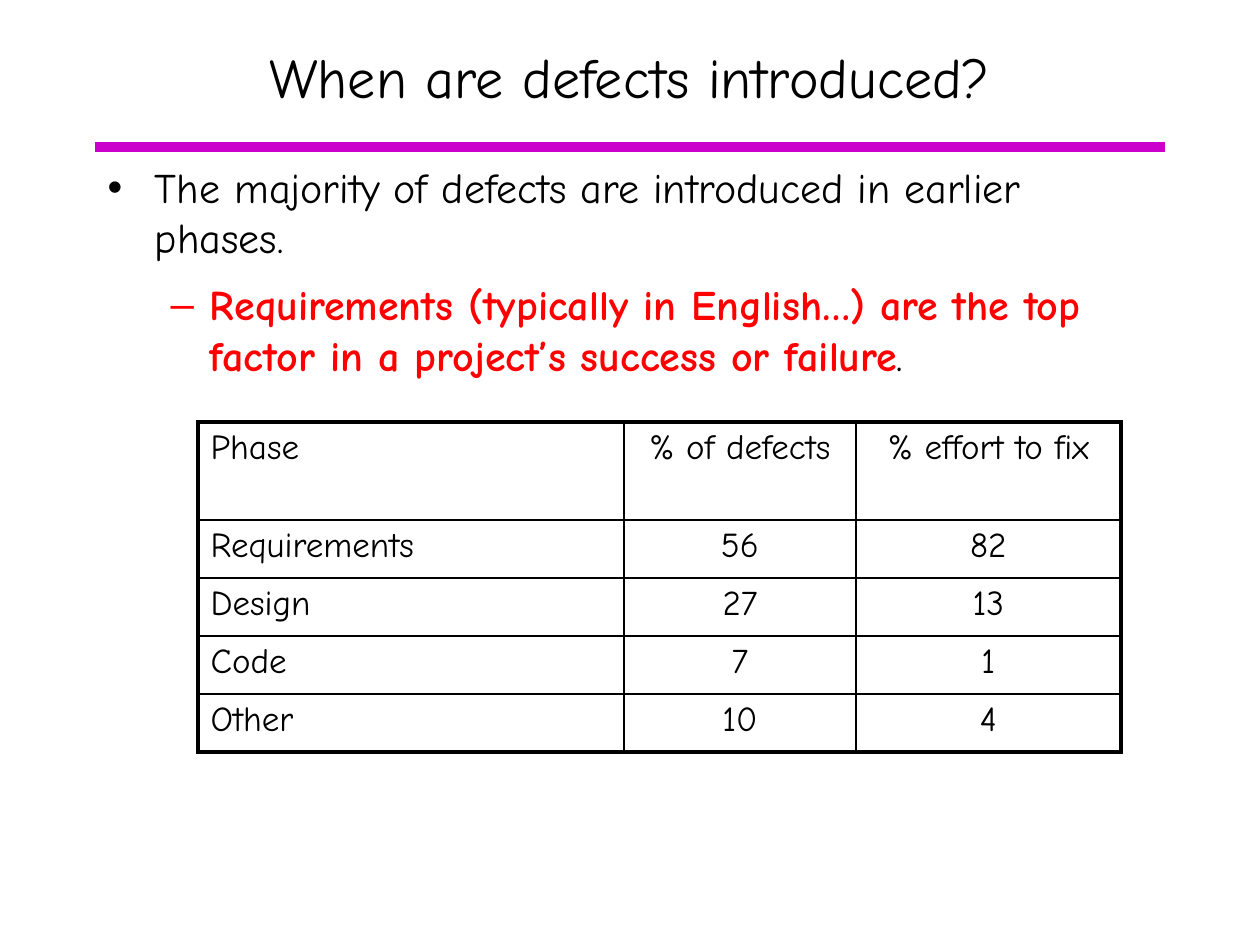
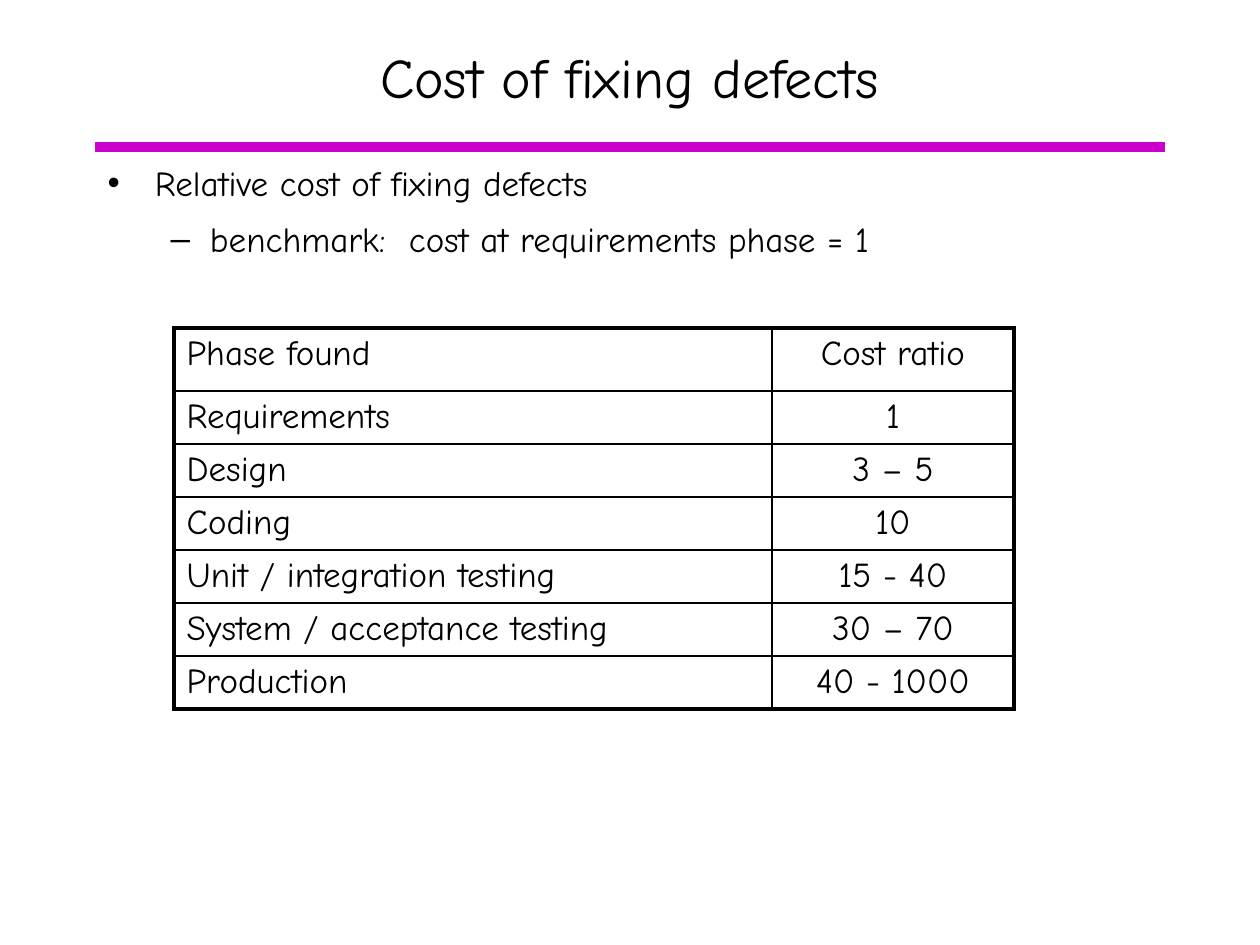
import dataclasses

import lxml.etree
import pptx
import pptx.dml.color
import pptx.enum.shapes
import pptx.enum.text
import pptx.oxml.ns
import pptx.util

EMU_PER_PX = 914400 / 126


@dataclasses.dataclass(frozen=True)
class Theme:
    font: str = "Comic Neue"
    ink: str = "000000"
    accent: str = "CC00CC"
    warning: str = "FF0000"
    title_size: int = 32
    large_size: int = 24
    text_size: int = 20
    sub_point_gap: float = 0.4
    band_width: float = 6
    outer_border: float = 2.25
    inner_border: float = 1


@dataclasses.dataclass(frozen=True)
class Box:
    left: int
    top: int
    width: int
    height: int


THEME = Theme()
TITLE_BOX = Box(95, 16, 1070, 120)
BAND_BOX = Box(95, 147, 1070, 0)
POINTS_BOX = Box(95, 155, 1070, 331)


def px(length):
    return pptx.util.Emu(round(length * EMU_PER_PX))


def frame(box):
    return px(box.left), px(box.top), px(box.width), px(box.height)


def add_run(paragraph, text, size, color=THEME.ink, bold=False):
    run = paragraph.add_run()
    run.text = text
    run.font.name = THEME.font
    run.font.size = pptx.util.Pt(size)
    run.font.bold = bold
    run.font.color.rgb = pptx.dml.color.RGBColor.from_string(color)


def place(placeholder, box):
    placeholder.left, placeholder.top, placeholder.width, placeholder.height = frame(box)
    placeholder.text_frame.auto_size = pptx.enum.text.MSO_AUTO_SIZE.NONE
    placeholder.text_frame.word_wrap = True
    return placeholder.text_frame


def add_heading(slide, box, heading):
    text_frame = place(slide.shapes.title, box)
    text_frame.vertical_anchor = pptx.enum.text.MSO_ANCHOR.MIDDLE
    paragraph = text_frame.paragraphs[0]
    paragraph.alignment = pptx.enum.text.PP_ALIGN.CENTER
    add_run(paragraph, heading, THEME.title_size)


def add_band(slide, box):
    band = slide.shapes.add_connector(
        pptx.enum.shapes.MSO_CONNECTOR.STRAIGHT,
        px(box.left), px(box.top), px(box.left + box.width), px(box.top + box.height),
    )
    band.line.color.rgb = pptx.dml.color.RGBColor.from_string(THEME.accent)
    band.line.width = pptx.util.Pt(THEME.band_width)
    lxml.etree.SubElement(band._element.spPr, pptx.oxml.ns.qn("a:effectLst"))


def add_points(slide, box, size, point, sub_point_runs):
    text_frame = place(slide.placeholders[1], box)
    main_point = text_frame.paragraphs[0]
    main_point.space_before = pptx.util.Pt(0)
    add_run(main_point, point, size)
    sub_point = text_frame.add_paragraph()
    sub_point.level = 1
    sub_point.space_before = pptx.util.Pt(size * THEME.sub_point_gap)
    for text, color, bold in sub_point_runs:
        add_run(sub_point, text, size, color, bold)


def set_borders(cell, outer_sides):
    properties = cell._tc.get_or_add_tcPr()
    for position, side in enumerate("LRTB"):
        points = THEME.outer_border if side in outer_sides else THEME.inner_border
        border = lxml.etree.Element(
            pptx.oxml.ns.qn(f"a:ln{side}"), w=str(pptx.util.Pt(points))
        )
        fill = lxml.etree.SubElement(border, pptx.oxml.ns.qn("a:solidFill"))
        lxml.etree.SubElement(fill, pptx.oxml.ns.qn("a:srgbClr"), val=THEME.ink)
        properties.insert(position, border)


def add_phase_table(slide, left, top, column_widths, row_heights, records):
    box = Box(left, top, sum(column_widths), sum(row_heights))
    table = slide.shapes.add_table(
        len(row_heights), len(column_widths), *frame(box)
    ).table
    table.first_row = False
    table.horz_banding = False
    for column, width in zip(table.columns, column_widths):
        column.width = px(width)
    for row, height in zip(table.rows, row_heights):
        row.height = px(height)
    last_row, last_column = len(row_heights) - 1, len(column_widths) - 1
    for row_index, record in enumerate(records):
        for column_index, value in enumerate(record):
            cell = table.cell(row_index, column_index)
            cell.fill.background()
            edges = {
                "L": column_index == 0,
                "R": column_index == last_column,
                "T": row_index == 0,
                "B": row_index == last_row,
            }
            set_borders(cell, [side for side, is_outer in edges.items() if is_outer])
            paragraph = cell.text_frame.paragraphs[0]
            if column_index:
                paragraph.alignment = pptx.enum.text.PP_ALIGN.CENTER
            add_run(paragraph, value, THEME.text_size)


def add_topic_slide(deck, heading, size, point, sub_point_runs):
    slide = deck.slides.add_slide(deck.slide_layouts[1])
    add_band(slide, BAND_BOX)
    add_heading(slide, TITLE_BOX, heading)
    add_points(slide, POINTS_BOX, size, point, sub_point_runs)
    return slide


def build_defect_origins(deck):
    slide = add_topic_slide(
        deck,
        "When are defects introduced?",
        THEME.large_size,
        "The majority of defects are introduced in earlier phases.",
        [
            (
                "Requirements (typically in English…) are the top factor "
                "in a project’s success or failure",
                THEME.warning,
                True,
            ),
            (".", THEME.ink, False),
        ],
    )
    defect_shares = [
        ("Phase", "% of defects", "% effort to fix"),
        ("Requirements", "56", "82"),
        ("Design", "27", "13"),
        ("Code", "7", "1"),
        ("Other", "10", "4"),
    ]
    add_phase_table(slide, 198, 422, [426, 232, 265], [98] + [58] * 4, defect_shares)


def build_fixing_costs(deck):
    slide = add_topic_slide(
        deck,
        "Cost of fixing defects",
        THEME.text_size,
        "Relative cost of fixing defects",
        [("benchmark:  cost at requirements phase = 1", THEME.ink, False)],
    )
    cost_ratios = [
        ("Phase found", "Cost ratio"),
        ("Requirements", "1"),
        ("Design", "3 – 5"),
        ("Coding", "10"),
        ("Unit / integration testing", "15 - 40"),
        ("System / acceptance testing", "30 – 70"),
        ("Production", "40 - 1000"),
    ]
    add_phase_table(slide, 174, 328, [598, 242], [63] + [53] * 6, cost_ratios)


def main():
    deck = pptx.Presentation()
    deck.slide_width, deck.slide_height = px(1260), px(945)
    build_defect_origins(deck)
    build_fixing_costs(deck)
    deck.save("out.pptx")


if __name__ == "__main__":
    main()
